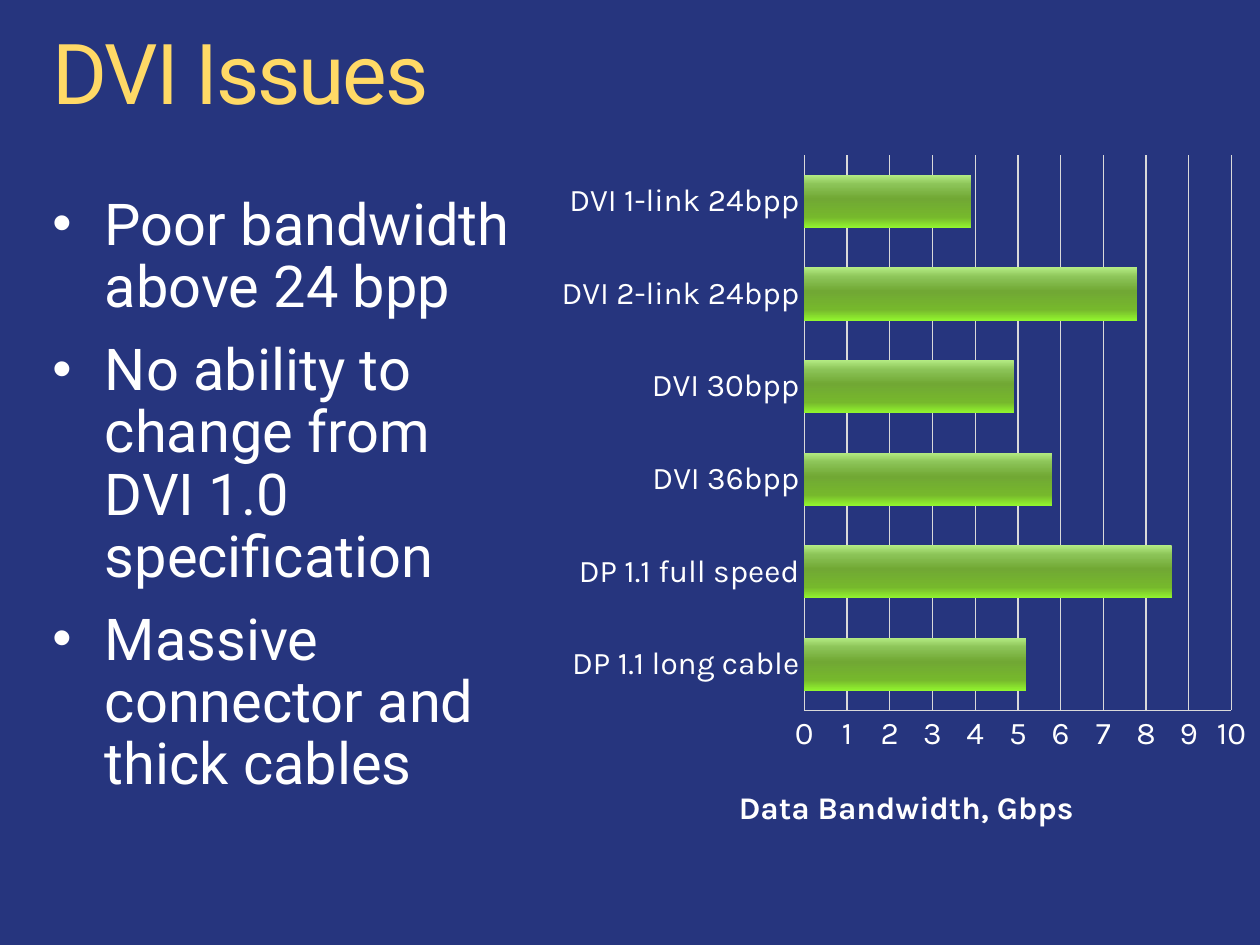
from lxml.etree import SubElement
from pptx import Presentation
from pptx.chart.data import CategoryChartData
from pptx.dml.color import RGBColor
from pptx.enum.chart import XL_CHART_TYPE, XL_TICK_MARK
from pptx.enum.text import MSO_ANCHOR, PP_ALIGN
from pptx.oxml import parse_xml
from pptx.oxml.ns import nsdecls, qn
from pptx.util import Pt

TITLE = "DVI Issues"
POINTS = [
    "Poor bandwidth above 24 bpp",
    "No ability to change from\vDVI 1.0 specification",
    "Massive connector and thick cables",
]
AXIS = "Data Bandwidth, Gbps"
RATES = [
    ("DP 1.1 long cable", 5.2),
    ("DP 1.1 full speed", 8.6),
    ("DVI 36bpp", 5.8),
    ("DVI 30bpp", 4.9),
    ("DVI 2-link 24bpp", 7.8),
    ("DVI 1-link 24bpp", 3.9),
]
STOPS = [(0, "B5EC84"), (18, "8CC458"), (45, "71A834"), (80, "76B82C"), (100, "92F52E")]
NAVY = RGBColor(0x26, 0x35, 0x7E)
GOLD = RGBColor(0xFF, 0xD9, 0x66)
WHITE = RGBColor(0xFF, 0xFF, 0xFF)
GREY = RGBColor(0xD9, 0xD9, 0xD9)


def style(font, name, size, color):
    font.name, font.size = name, Pt(size)
    font.color.rgb = color


def clear(frame):
    frame.margin_left = frame.margin_right = 0
    frame.margin_top = frame.margin_bottom = 0
    frame.vertical_anchor = MSO_ANCHOR.TOP
    frame.word_wrap = True


def place(node, index, **spots):
    for old in node.findall(qn("c:layout")):
        node.remove(old)
    lay = parse_xml(f"<c:layout {nsdecls('c')}/>")
    box = SubElement(lay, qn("c:manualLayout"))
    if "w" in spots:
        SubElement(box, qn("c:layoutTarget")).set("val", "inner")
    for key in "xy":
        SubElement(box, qn(f"c:{key}Mode")).set("val", "edge")
    for key, val in spots.items():
        SubElement(box, qn(f"c:{key}")).set("val", str(val))
    node.insert(index, lay)


def bullet(para):
    props = para._p.get_or_add_pPr()
    props.set("marL", str(Pt(30)))
    props.set("indent", str(-Pt(30)))
    color = SubElement(props, qn("a:buClr"))
    SubElement(color, qn("a:srgbClr")).set("val", str(WHITE))
    SubElement(props, qn("a:buSzPct")).set("val", "95000")
    SubElement(props, qn("a:buFont")).set("typeface", "Arial")
    SubElement(props, qn("a:buChar")).set("char", "•")


def shade(fill):
    fill.gradient()
    fill.gradient_angle = 270
    stops = fill._xPr.find(qn("a:gradFill")).find(qn("a:gsLst"))
    for old in list(stops):
        stops.remove(old)
    for pos, color in STOPS:
        stop = SubElement(stops, qn("a:gs"))
        stop.set("pos", str(pos * 1000))
        SubElement(stop, qn("a:srgbClr")).set("val", color)


def add_title(slide):
    title = slide.shapes.title
    title.left, title.top, title.width, title.height = Pt(30), Pt(18), Pt(660), Pt(52)
    frame = title.text_frame
    frame.text = TITLE
    clear(frame)
    para = frame.paragraphs[0]
    para.alignment, para.line_spacing = PP_ALIGN.LEFT, 0.9
    run = para.runs[0]
    style(run.font, "Roboto", 48, GOLD)
    run.font._element.set("spc", "-120")


def add_points(slide):
    frame = slide.shapes.add_textbox(Pt(30), Pt(111.6), Pt(288.7), Pt(396)).text_frame
    clear(frame)
    for i, text in enumerate(POINTS):
        para = frame.add_paragraph() if i else frame.paragraphs[0]
        para.text = text
        para.line_spacing = 0.9
        para.space_before = Pt(11.7 if i else 0)
        bullet(para)
        style(para.font, "Roboto", 33, WHITE)
        for run in para.runs:
            style(run.font, "Roboto", 33, WHITE)


def add_rates(slide):
    data = CategoryChartData()
    data.categories = [name for name, rate in RATES]
    data.add_series("Series 1", [rate for name, rate in RATES])
    chart = slide.shapes.add_chart(
        XL_CHART_TYPE.BAR_CLUSTERED, Pt(313.2), Pt(80.6), Pt(406.8), Pt(401.8), data
    ).chart
    chart.has_title = chart.has_legend = False
    style(chart.font, "Karla", 18, WHITE)
    plot = chart.plots[0]
    plot.gap_width, plot.overlap = 75, -25
    plot.vary_by_categories = False
    shade(plot.series[0].format.fill)

    cat, val = chart.category_axis, chart.value_axis
    for axis in (cat, val):
        axis.major_tick_mark = axis.minor_tick_mark = XL_TICK_MARK.NONE
        axis.format.line.color.rgb = GREY
        axis.format.line.width = Pt(0.75)
    val.minimum_scale, val.maximum_scale, val.major_unit = 0, 10, 1
    val.has_major_gridlines = True
    val.major_gridlines.format.line.color.rgb = GREY
    val.major_gridlines.format.line.width = Pt(0.75)
    val.tick_labels.number_format = "General"
    val.tick_labels.number_format_is_linked = False

    head = val.axis_title
    head.text_frame.text = AXIS
    font = head.text_frame.paragraphs[0].runs[0].font
    style(font, "Karla", 18, WHITE)
    font.bold = True
    place(head._element, 1, x=0.26, y=0.91)
    place(chart._chartSpace.chart.plotArea, 0, x=0.36, y=0.02, w=0.6, h=0.79)


def main():
    deck = Presentation()
    deck.slide_width, deck.slide_height = Pt(720), Pt(540)
    slide = deck.slides.add_slide(deck.slide_layouts[5])
    slide.background.fill.solid()
    slide.background.fill.fore_color.rgb = NAVY
    add_title(slide)
    add_points(slide)
    add_rates(slide)
    deck.save("out.pptx")


if __name__ == "__main__":
    main()
